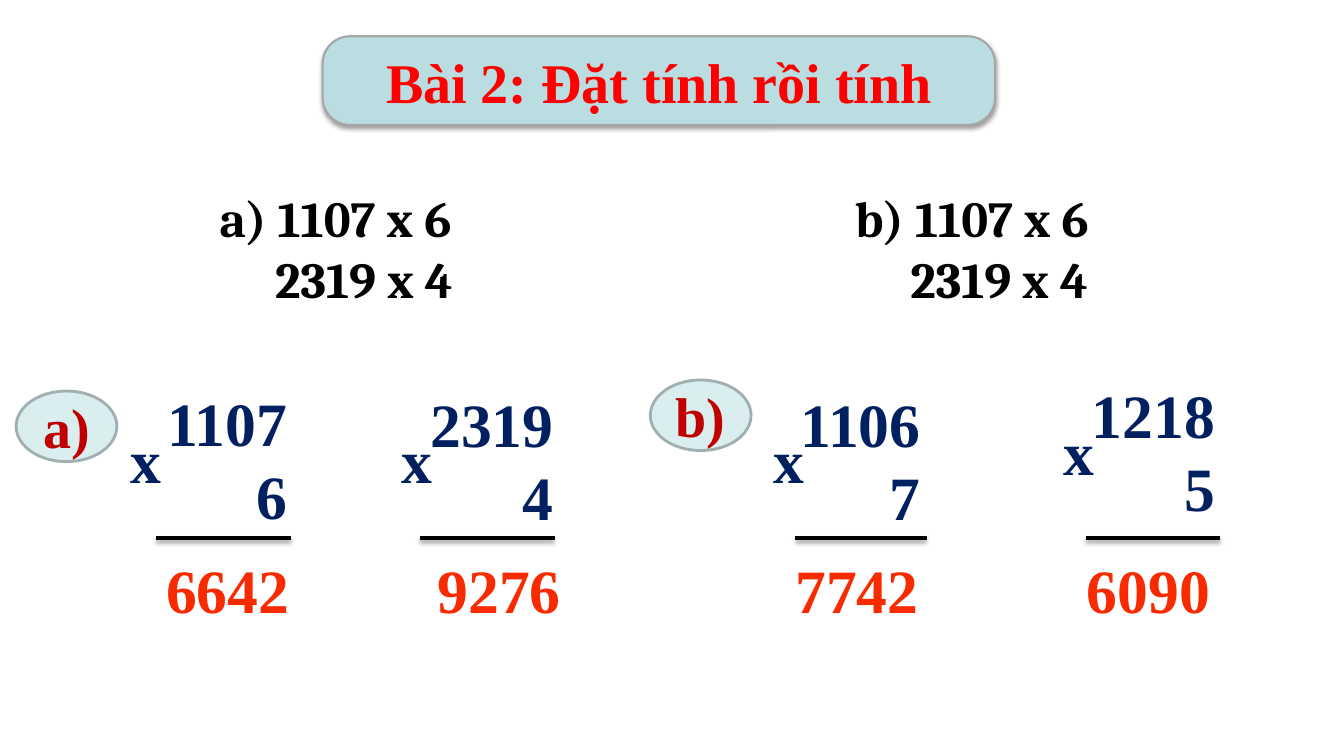
from lxml import etree
from pptx import Presentation
from pptx.dml.color import RGBColor
from pptx.enum.shapes import MSO_CONNECTOR, MSO_SHAPE
from pptx.enum.text import MSO_ANCHOR, PP_ALIGN
from pptx.oxml.ns import qn
from pptx.util import Inches, Pt

LEFT, CENTER, RIGHT = PP_ALIGN.LEFT, PP_ALIGN.CENTER, PP_ALIGN.RIGHT
TOP, MIDDLE, BOTTOM = MSO_ANCHOR.TOP, MSO_ANCHOR.MIDDLE, MSO_ANCHOR.BOTTOM
ROUNDED, OVAL = MSO_SHAPE.ROUNDED_RECTANGLE, MSO_SHAPE.OVAL
STRAIGHT = MSO_CONNECTOR.STRAIGHT

BLACK = RGBColor(0x00, 0x00, 0x00)
NAVY = RGBColor(0x00, 0x20, 0x60)
ORANGE = RGBColor(0xF7, 0x2A, 0x00)
RED = RGBColor(0xFF, 0x00, 0x00)
DARK_RED = RGBColor(0xC0, 0x00, 0x00)
TEAL = RGBColor(0xBA, 0xDD, 0xE1)
PALE_TEAL = RGBColor(0xDA, 0xED, 0xEF)
GRAY = RGBColor(0xA6, 0xA6, 0xA6)
BLUE_GRAY = RGBColor(0xA1, 0xAF, 0xB1)

SERIF = "Times New Roman"
HEADING_SERIF = "Cambria"
RULE_TOP = 5.34
RESULT_TOP = 5.43


def add_run(paragraph, text, size, color, font=SERIF):
    """Append a bold run to a paragraph."""
    run = paragraph.add_run()
    run.text = text
    run.font.name = font
    run.font.size = Pt(size)
    run.font.bold = True
    run.font.color.rgb = color


def add_shadow(shape, opacity, distance):
    """Give a shape or line a soft black shadow that falls downwards."""
    effects = etree.SubElement(shape._element.spPr, qn("a:effectLst"))
    shadow = etree.SubElement(effects, qn("a:outerShdw"), blurRad=str(Pt(3.1)),
                              dist=str(Pt(distance)), dir="5400000", rotWithShape="0")
    color = etree.SubElement(shadow, qn("a:srgbClr"), val=str(BLACK))
    etree.SubElement(color, qn("a:alpha"), val=str(opacity * 1000))


def add_text_box(shapes, box, anchor, alignment):
    """Add an empty text box and return its text frame."""
    frame = shapes.add_textbox(*map(Inches, box)).text_frame
    frame.word_wrap = True
    frame.vertical_anchor = anchor
    frame.paragraphs[0].alignment = alignment
    return frame


def add_label(slide, kind, box, text, color, fill, line, line_width):
    """Add a filled preset shape with a centred label."""
    shape = slide.shapes.add_shape(kind, *map(Inches, box))
    shape.fill.solid()
    shape.fill.fore_color.rgb = fill
    shape.line.color.rgb = line
    shape.line.width = Pt(line_width)
    frame = shape.text_frame
    frame.word_wrap = False
    frame.vertical_anchor = MIDDLE
    frame.paragraphs[0].alignment = CENTER
    add_run(frame.paragraphs[0], text, 40, color)
    return shape


def add_title(slide, text):
    """Add the rounded title banner."""
    banner = add_label(slide, ROUNDED, (3.2, 0.36, 6.67, 0.88), text, RED, TEAL, GRAY, 1.5)
    banner.adjustments[0] = 0.309
    add_shadow(banner, 38, 1.6)


def add_badge(slide, left, top, text):
    """Add an oval part marker."""
    badge = add_label(slide, OVAL, (left, top, 1, 0.7), text, DARK_RED, PALE_TEAL, BLUE_GRAY, 2)
    badge.shadow.inherit = False


def add_exercise(slide, left, lines):
    """Add the exercise lines, the later ones indented past the part letter."""
    frame = add_text_box(slide.shapes, (left, 1.81, 3.95, 1.31), TOP, LEFT)
    for index, line in enumerate(lines):
        paragraph = frame.add_paragraph() if index else frame.paragraphs[0]
        if index:
            paragraph._p.get_or_add_pPr().set("marL", str(Inches(0.55)))
        add_run(paragraph, line, 36, BLACK, HEADING_SERIF)


def add_multiplication(slide, factors, right, bottom, sign, rule):
    """Add a grouped column multiplication: factors, sign and rule."""
    shapes = slide.shapes.add_group_shape().shapes
    frame = add_text_box(shapes, (right - 1.7, bottom - 1.08, 1.8, 1.08), BOTTOM, RIGHT)
    paragraph = frame.paragraphs[0]
    add_run(paragraph, factors[0], 44, NAVY)
    paragraph.add_line_break()
    add_run(paragraph, factors[1], 44, NAVY)

    sign_center, sign_bottom = sign
    frame = add_text_box(shapes, (sign_center - 0.5, sign_bottom - 0.5, 1, 0.5), BOTTOM, CENTER)
    add_run(frame.paragraphs[0], "x", 44, NAVY)

    start, end = rule
    line = shapes.add_connector(STRAIGHT, Inches(start), Inches(RULE_TOP),
                                Inches(end), Inches(RULE_TOP))
    line.line.color.rgb = BLACK
    line.line.width = Pt(3)
    add_shadow(line, 35, 1.8)


def add_result(slide, left, text):
    """Add the product below a rule."""
    frame = add_text_box(slide.shapes, (left, RESULT_TOP, 1.7, 0.84), TOP, LEFT)
    add_run(frame.paragraphs[0], text, 44, ORANGE)


def main():
    """Build and save the multiplication slide."""
    presentation = Presentation()
    presentation.slide_width = Inches(13.33)
    presentation.slide_height = Inches(7.5)
    slide = presentation.slides.add_slide(presentation.slide_layouts[6])

    multiplications = [
        (("1107", "6"), 2.85, 5.33, (1.45, 4.97), (1.55, 2.89), 1.55, "6642"),
        (("2319", "4"), 5.49, 5.34, (4.14, 4.97), (4.17, 5.5), 4.24, "9276"),
        (("1106", "7"), 9.13, 5.34, (7.82, 4.97), (7.89, 9.19), 7.79, "7742"),
        (("1218", "5"), 12.05, 5.25, (10.7, 4.89), (10.77, 12.1), 10.68, "6090"),
    ]
    for factors, right, bottom, sign, rule, result_left, result in multiplications:
        add_multiplication(slide, factors, right, bottom, sign, rule)
        add_result(slide, result_left, result)

    add_title(slide, "Bài 2: Đặt tính rồi tính")
    add_badge(slide, 0.16, 3.88, "a)")
    add_badge(slide, 6.45, 3.77, "b)")
    add_exercise(slide, 2.08, ["a) 1107 x 6", "2319 x 4"])
    add_exercise(slide, 8.38, ["b) 1107 x 6", "2319 x 4"])

    presentation.save("out.pptx")


if __name__ == "__main__":
    main()
